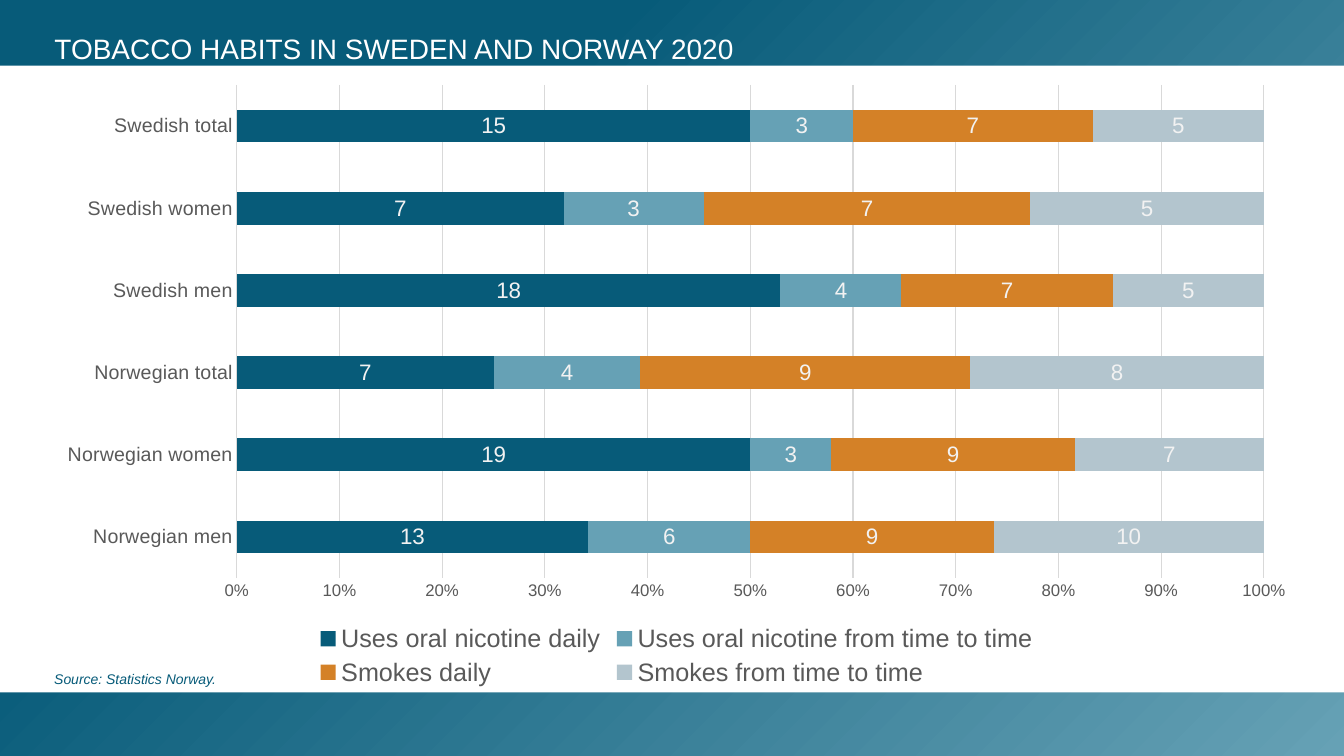
from dataclasses import dataclass

import pptx
import pptx.chart.data
import pptx.dml.color
import pptx.enum.chart
import pptx.enum.text
import pptx.util

Pt = pptx.util.Pt
FONT = "Arial"
DARK_TEAL, LIGHT_TEAL = "075B79", "66A1B5"
WHITE, GREY_TEXT, GRID_GREY, LABEL_WHITE = "FFFFFF", "595959", "D9D9D9", "F2F2F2"
SLIDE_WIDTH, SLIDE_HEIGHT = 960.48, 540


@dataclass
class Box:
    left: float
    top: float
    width: float
    height: float

    def lengths(self) -> tuple:
        return Pt(self.left), Pt(self.top), Pt(self.width), Pt(self.height)


@dataclass
class Habit:
    name: str
    percentages: tuple
    color: str


GROUPS = ("Norwegian men", "Norwegian women", "Norwegian total",
          "Swedish men", "Swedish women", "Swedish total")
HABITS = (
    Habit("Uses oral nicotine daily", (13, 19, 7, 18, 7, 15), DARK_TEAL),
    Habit("Uses oral nicotine from time to time", (6, 3, 4, 4, 3, 3), LIGHT_TEAL),
    Habit("Smokes daily", (9, 9, 9, 7, 7, 7), "D48127"),
    Habit("Smokes from time to time", (10, 7, 8, 5, 5, 5), "B3C5CE"),
)


def rgb(color: str) -> pptx.dml.color.RGBColor:
    return pptx.dml.color.RGBColor.from_string(color)


def style_font(font, size: float, color: str) -> None:
    font.name = FONT
    font.size = Pt(size)
    font.color.rgb = rgb(color)


def add_rectangle(slide, box: Box):
    shape = slide.shapes.add_shape(
        pptx.enum.shapes.MSO_SHAPE.RECTANGLE, *box.lengths())
    shape.shadow.inherit = False
    shape.line.fill.background()
    return shape


def add_background(slide) -> None:
    backdrop = add_rectangle(slide, Box(0, 0, SLIDE_WIDTH, SLIDE_HEIGHT))
    backdrop.fill.gradient()
    backdrop.fill.gradient_angle = 315
    stops = ((0.3, DARK_TEAL), (1, LIGHT_TEAL))
    for stop, (position, color) in zip(backdrop.fill.gradient_stops, stops):
        stop.position = position
        stop.color.rgb = rgb(color)
    panel = add_rectangle(slide, Box(0, 46.8, SLIDE_WIDTH, 447.84))
    panel.fill.solid()
    panel.fill.fore_color.rgb = rgb(WHITE)


def add_text(slide, box: Box, text: str, size: float, color: str):
    text_frame = slide.shapes.add_textbox(*box.lengths()).text_frame
    text_frame.word_wrap = True
    text_frame.text = text
    style_font(text_frame.paragraphs[0].runs[0].font, size, color)
    return text_frame


def add_title(slide) -> None:
    text_frame = add_text(slide, Box(29.52, 17.28, 906.48, 33.84),
                          "TOBACCO HABITS IN SWEDEN AND NORWAY 2020", 20, WHITE)
    text_frame.vertical_anchor = pptx.enum.text.MSO_ANCHOR.BOTTOM
    text_frame.margin_left = text_frame.margin_right = Pt(9.36)
    text_frame.margin_top = text_frame.margin_bottom = Pt(5.04)
    text_frame.paragraphs[0].line_spacing = 0.8


def style_axes(chart) -> None:
    no_ticks = pptx.enum.chart.XL_TICK_MARK.NONE
    groups, shares = chart.category_axis, chart.value_axis
    for axis, size in ((groups, 14), (shares, 12)):
        axis.major_tick_mark = axis.minor_tick_mark = no_ticks
        style_font(axis.tick_labels.font, size, GREY_TEXT)
    shares.has_major_gridlines = True
    shares.tick_labels.number_format = "0%"
    shares.tick_labels.number_format_is_linked = False
    shares.format.line.fill.background()
    for line in (groups.format.line, shares.major_gridlines.format.line):
        line.color.rgb = rgb(GRID_GREY)
        line.width = Pt(0.75)


def add_habits_chart(slide) -> None:
    data = pptx.chart.data.CategoryChartData()
    data.categories = GROUPS
    for habit in HABITS:
        data.add_series(habit.name, habit.percentages)
    chart = slide.shapes.add_chart(
        pptx.enum.chart.XL_CHART_TYPE.BAR_STACKED_100,
        *Box(30.24, 51.84, 906.48, 442.08).lengths(), data).chart
    style_font(chart.font, 10, "000000")
    chart.has_title = False
    chart.has_legend = True
    chart.legend.position = pptx.enum.chart.XL_LEGEND_POSITION.BOTTOM
    chart.legend.include_in_layout = False
    style_font(chart.legend.font, 18, GREY_TEXT)
    style_axes(chart)

    plot = chart.plots[0]
    plot.vary_by_categories = False
    plot.gap_width = 150
    plot.overlap = 100
    for series, habit in zip(plot.series, HABITS):
        series.format.fill.solid()
        series.format.fill.fore_color.rgb = rgb(habit.color)
        series.data_labels.show_value = True
        style_font(series.data_labels.font, 16, LABEL_WHITE)


def add_source(slide) -> None:
    text_frame = add_text(slide, Box(31.68, 475.2, 550.08, 19.44),
                          "Source: Statistics Norway.", 10, DARK_TEAL)
    text_frame.auto_size = pptx.enum.text.MSO_AUTO_SIZE.SHAPE_TO_FIT_TEXT
    text_frame.paragraphs[0].runs[0].font.italic = True


def main() -> None:
    presentation = pptx.Presentation()
    presentation.slide_width = Pt(SLIDE_WIDTH)
    presentation.slide_height = Pt(SLIDE_HEIGHT)
    slide = presentation.slides.add_slide(presentation.slide_layouts[6])
    add_background(slide)
    add_title(slide)
    add_habits_chart(slide)
    add_source(slide)
    presentation.save("out.pptx")


if __name__ == "__main__":
    main()
